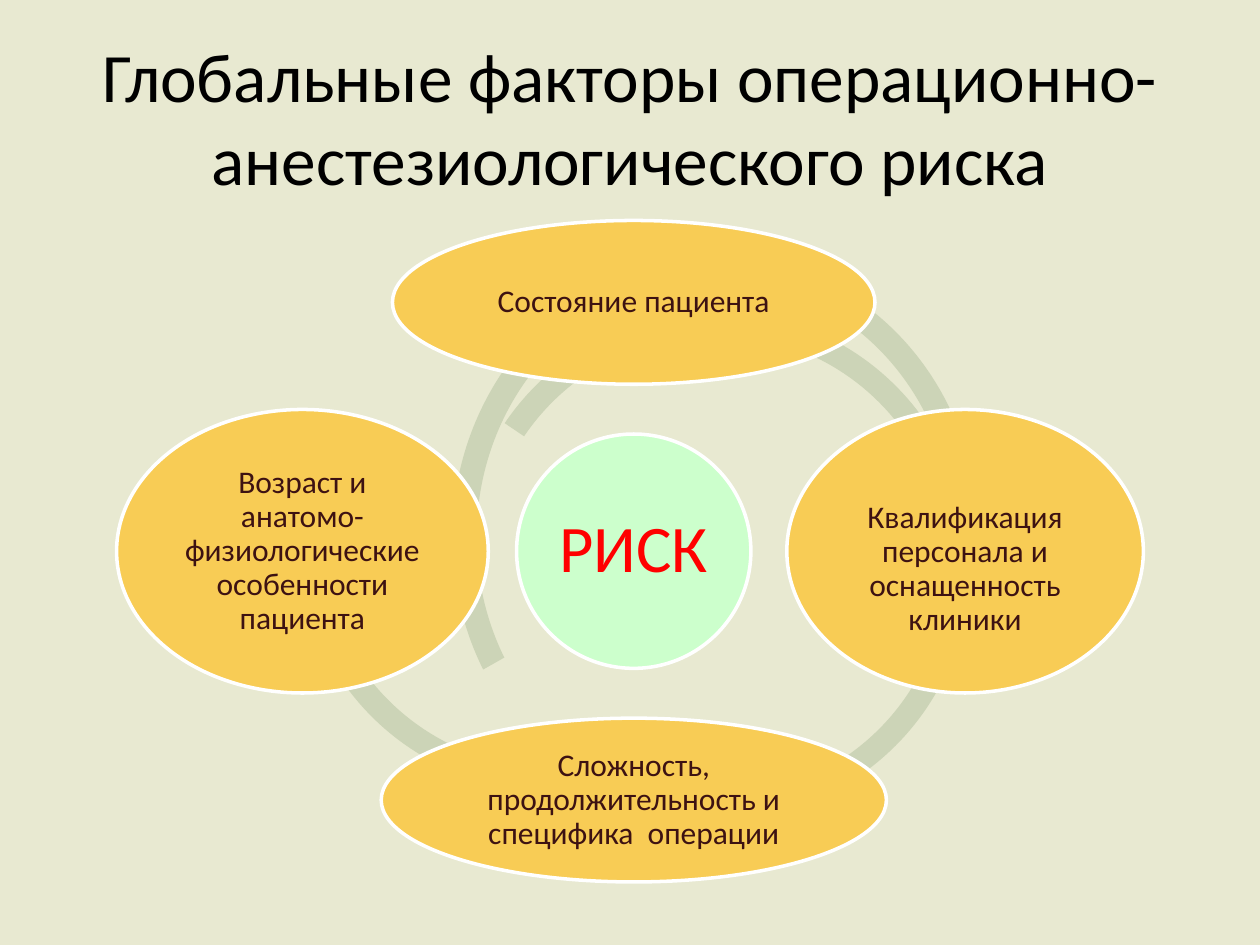
from pptx import Presentation, util as u
from pptx.dml.color import RGBColor
from pptx.enum import shapes, text

HUES = {"back": "E8E9D1", "ring": "CCD4B7", "core": "CCFFCC", "node": "F8CC55",
        "edge": "FFFFFF", "risk": "FF0000", "ink": "3D1212", "head": "000000"}
FONT = "Calibri"
TITLE = "Глобальные факторы операционно-анестезиологического риска"
MID = (5.03, 4.375)
REACH = (2.63, 1.975)

ARCS = [
    ((2.36, 2.24, 4.04, 4.04), 106.07, 173.56),
    ((2.36, 2.47, 4.04, 4.04), 42.44, 109.93),
    ((3.66, 2.47, 4.04, 4.04), 214.05, 65.63),
    ((3.59, 2.03, 4.18, 4.47), 150.37, 1.95),
]
CORE = ("РИСК", (0, 0), (1.86, 1.86))
NODES = [
    ("Состояние пациента", (0, -1), (3.83, 1.3)),
    ("Квалификация персонала и оснащенность клиники", (1, 0), (2.83, 2.25)),
    ("Сложность, продолжительность и специфика  операции", (0, 1), (4.01, 1.3)),
    ("Возраст и анатомо-физиологические особенности пациента", (-1, 0), (2.95, 2.25)),
]


def hue(name):
    return RGBColor.from_string(HUES[name])


def write(par, words, size, ink):
    par.alignment = text.PP_ALIGN.CENTER
    run = par.add_run()
    run.text = words
    run.font.name = FONT
    run.font.size = u.Pt(size)
    run.font.color.rgb = hue(ink)


def draw(slide, kind, box, fill):
    shape = slide.shapes.add_shape(kind, *map(u.Inches, box))
    shape.shadow.inherit = False
    shape.fill.solid()
    shape.fill.fore_color.rgb = hue(fill)
    shape.line.fill.background()
    return shape


def oval(slide, item, fill, ink, size, pad):
    words, step, dims = item
    spot = [m + s * r - d / 2 for m, s, r, d in zip(MID, step, REACH, dims)]
    shape = draw(slide, shapes.MSO_SHAPE.OVAL, (*spot, *dims), fill)
    shape.line.color.rgb = hue("edge")
    shape.line.width = u.Pt(2)
    frame = shape.text_frame
    frame.word_wrap = True
    frame.vertical_anchor = text.MSO_ANCHOR.MIDDLE
    frame.margin_left = frame.margin_right = u.Inches(pad)
    frame.margin_top = frame.margin_bottom = u.Inches(pad)
    par = frame.paragraphs[0]
    par.line_spacing = 0.9
    write(par, words, size, ink)
    return frame


def main():
    deck = Presentation()
    deck.slide_width, deck.slide_height = u.Inches(10), u.Inches(7.5)
    slide = deck.slides.add_slide(deck.slide_layouts[5])
    slide.background.fill.solid()
    slide.background.fill.fore_color.rgb = hue("back")

    title = slide.shapes.title
    title.left, title.top, title.width, title.height = map(u.Inches, (0.5, 0.3, 9, 1.25))
    frame = title.text_frame
    frame.word_wrap = True
    frame.auto_size = text.MSO_AUTO_SIZE.NONE
    frame.vertical_anchor = text.MSO_ANCHOR.MIDDLE
    write(frame.paragraphs[0], TITLE, 39.6, "head")

    for box, start, end in ARCS:
        arc = draw(slide, shapes.MSO_SHAPE.BLOCK_ARC, box, "ring")
        arc.adjustments[0] = start * 0.6
        arc.adjustments[1] = end * 0.6
        arc.adjustments[2] = 0.046

    oval(slide, CORE, "core", "risk", 38, 0.05)
    frames = [oval(slide, node, "node", "ink", 18, 0.03) for node in NODES]
    staff = frames[1]
    staff.vertical_anchor = text.MSO_ANCHOR.TOP
    staff.margin_top = u.Inches(0.4)

    deck.save("out.pptx")


if __name__ == "__main__":
    main()
